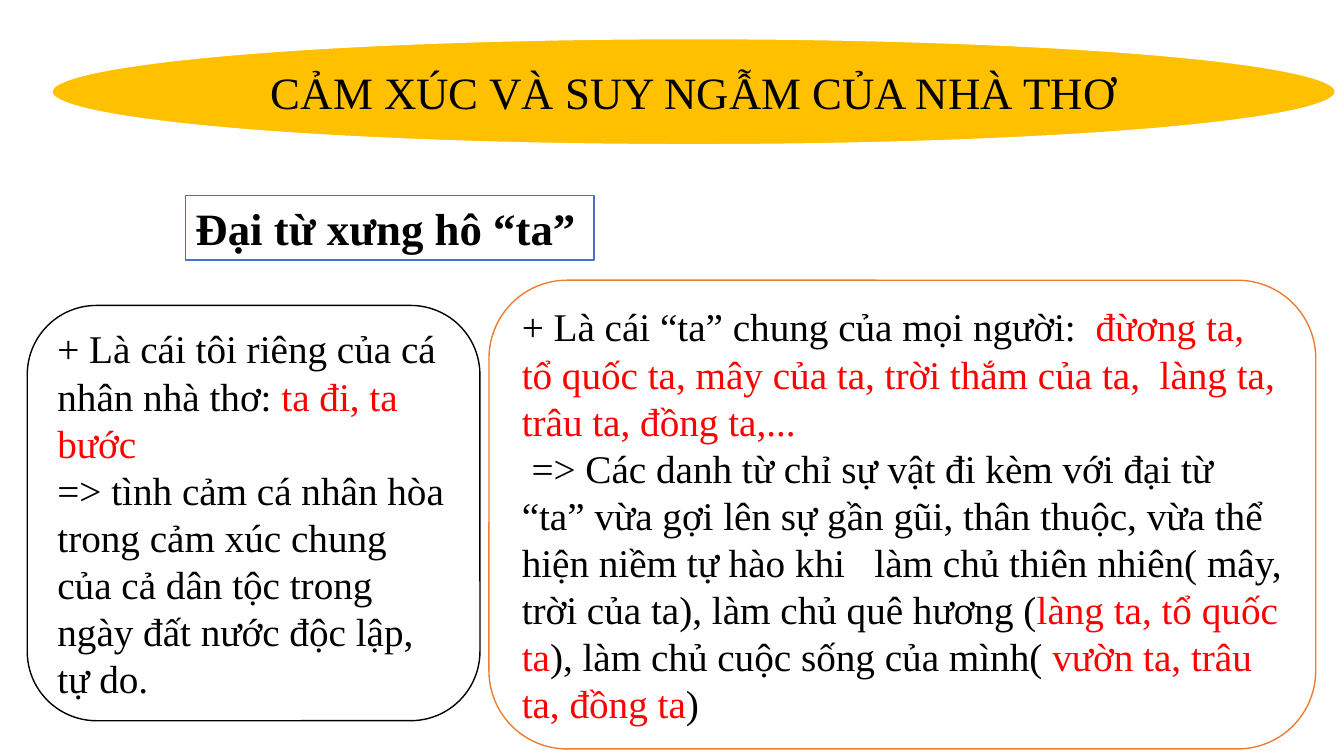
from dataclasses import dataclass

import pptx
import pptx.dml.color
import pptx.enum.shapes
import pptx.enum.text
import pptx.util

Inches = pptx.util.Inches
Pt = pptx.util.Pt
RGB = pptx.dml.color.RGBColor.from_string
SHAPE = pptx.enum.shapes.MSO_SHAPE
ALIGN = pptx.enum.text.PP_ALIGN
ANCHOR = pptx.enum.text.MSO_ANCHOR
AUTO_SIZE = pptx.enum.text.MSO_AUTO_SIZE


@dataclass(frozen=True)
class Theme:
    font: str = "Times New Roman"
    text: str = "000000"
    quote: str = "FF0000"
    paper: str = "FFFFFF"
    banner: str = "FFC000"
    personal_line: str = "000000"
    shared_line: str = "ED7D31"
    label_line: str = "4472C4"
    heading_size: int = 32
    body_size: int = 28


THEME = Theme()

TITLE = "CẢM XÚC VÀ SUY NGẪM CỦA NHÀ THƠ"
LABEL = "Đại từ xưng hô “ta”"

# Each paragraph alternates plain text and quoted words, starting with plain text.
PERSONAL = [
    ["+ Là cái tôi riêng của cá nhân nhà thơ: ", "ta đi, ta bước"],
    ["=> tình cảm cá nhân hòa trong cảm xúc chung của cả dân tộc trong "
     "ngày đất nước độc lập, tự do."],
]
SHARED = [
    ["+ Là cái “ta” chung của mọi người:  ",
     "đừơng ta, tổ quốc ta, mây của ta, trời thắm của ta,  làng ta, "
     "trâu ta, đồng ta,..."],
    [" => Các danh từ chỉ sự vật đi kèm với đại từ “ta” vừa gợi lên sự gần gũi, "
     "thân thuộc, vừa thể hiện niềm tự hào khi   làm chủ thiên nhiên( mây, "
     "trời của ta), làm chủ quê hương (",
     "làng ta, tổ quốc ta",
     "), làm chủ cuộc sống của mình( ",
     "vườn ta, trâu ta, đồng ta",
     ")"],
]


def add_panel(s, kind, box, fill, line, width):
    sp = s.shapes.add_shape(kind, *map(Inches, box))
    sp.shadow.inherit = False
    sp.fill.solid()
    sp.fill.fore_color.rgb = RGB(fill)
    sp.line.color.rgb = RGB(line)
    sp.line.width = Pt(width)
    return sp


def write_text(sp, paragraphs, size, align=ALIGN.LEFT, bold=False):
    """Fill a shape, colouring every second run of a paragraph as a quotation."""
    tf = sp.text_frame
    frame_format = {"word_wrap": True, "auto_size": AUTO_SIZE.NONE,
                    "vertical_anchor": ANCHOR.MIDDLE}
    for name, value in frame_format.items():
        setattr(tf, name, value)
    run_format = {"name": THEME.font, "size": Pt(size), "bold": bold}
    for i, runs in enumerate(paragraphs):
        p = tf.add_paragraph() if i else tf.paragraphs[0]
        p.alignment = align
        for j, text in enumerate(runs):
            r = p.add_run()
            r.text = text
            for name, value in run_format.items():
                setattr(r.font, name, value)
            r.font.color.rgb = RGB(THEME.quote if j % 2 else THEME.text)


def add_title(s, box):
    """Place the title on an oval banner."""
    add_panel(s, SHAPE.OVAL, box, THEME.banner, THEME.paper, 1.5)
    title = s.shapes.title
    # Bring the title in front of the banner.
    s.shapes.element.append(title.element)
    for name, value in zip(("left", "top", "width", "height"), box):
        setattr(title, name, Inches(value))
    write_text(title, [[TITLE]], THEME.heading_size, ALIGN.CENTER)


def add_label(s, box):
    sp = add_panel(s, SHAPE.RECTANGLE, box, THEME.paper, THEME.label_line, 1)
    write_text(sp, [[LABEL]], THEME.heading_size, bold=True)


def add_note(s, box, line, paragraphs):
    sp = add_panel(s, SHAPE.ROUNDED_RECTANGLE, box, THEME.paper, line, 1)
    write_text(sp, paragraphs, THEME.body_size)


def main():
    prs = pptx.Presentation()
    prs.slide_width = Inches(13.33)
    prs.slide_height = Inches(7.5)
    s = prs.slides.add_slide(prs.slide_layouts[5])

    add_note(s, (0.27, 3.03, 4.49, 4.12), THEME.personal_line, PERSONAL)
    add_title(s, (0.51, 0.38, 12.74, 1.06))
    add_note(s, (4.85, 2.78, 8.2, 4.65), THEME.shared_line, SHARED)
    add_label(s, (1.84, 1.94, 4.05, 0.64))

    prs.save("out.pptx")


if __name__ == "__main__":
    main()
